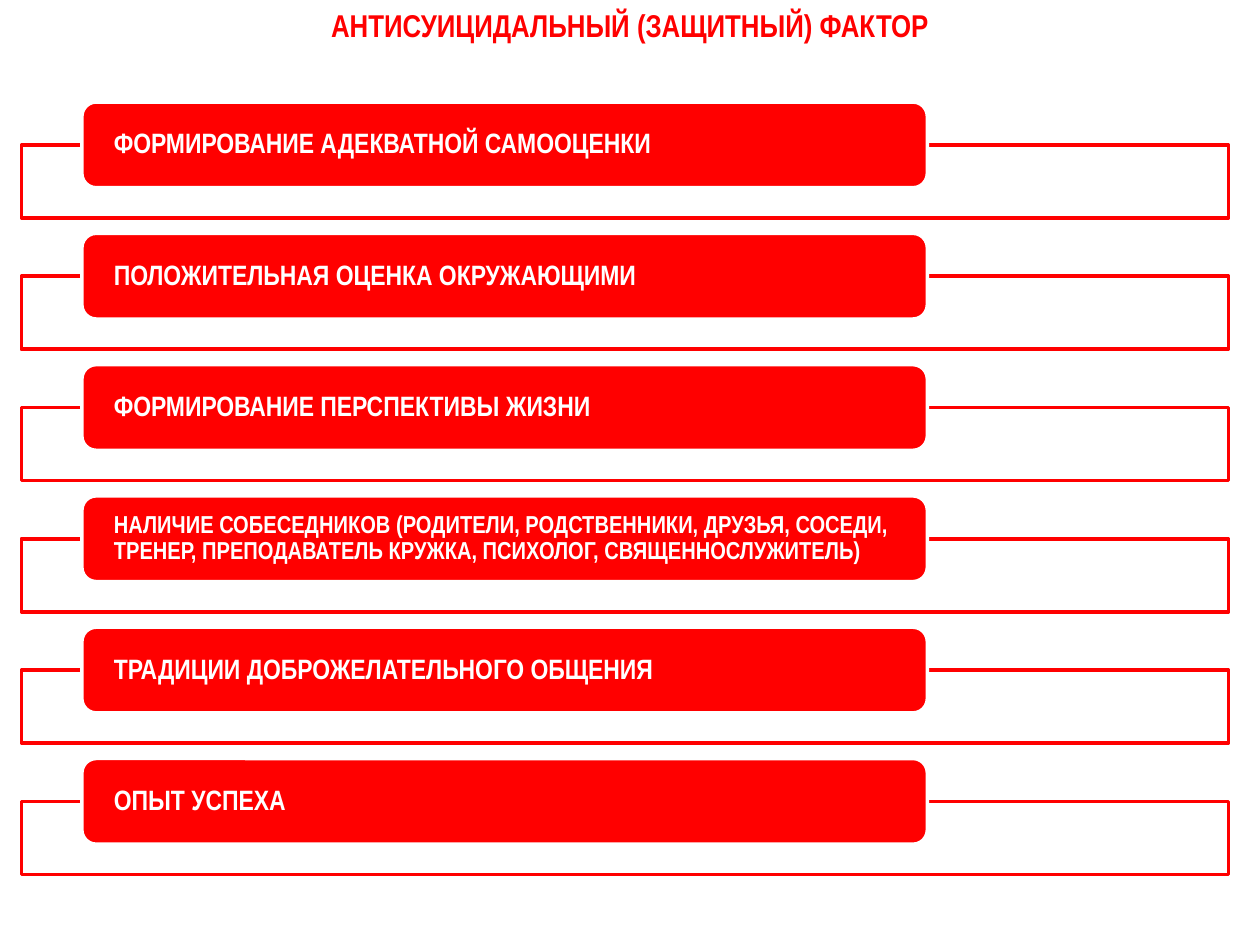
"""Build the slide that lists the factors protecting against suicide."""
from dataclasses import dataclass

import pptx
import pptx.dml.color
import pptx.enum.shapes
import pptx.enum.text
import pptx.oxml
import pptx.oxml.ns
import pptx.util
from pptx.util import Inches

RED = pptx.dml.color.RGBColor(0xFF, 0x00, 0x00)
WHITE = pptx.dml.color.RGBColor(0xFF, 0xFF, 0xFF)
FONT = "Arial Narrow"
FIRST_TOP, LAST_TOP = 0.81, 6.02
FRAME_DROP = 0.34


@dataclass(frozen=True)
class Factor:
    wording: str
    size: int = 16


FACTORS = (
    Factor("ФОРМИРОВАНИЕ АДЕКВАТНОЙ САМООЦЕНКИ"),
    Factor("ПОЛОЖИТЕЛЬНАЯ ОЦЕНКА ОКРУЖАЮЩИМИ"),
    Factor("ФОРМИРОВАНИЕ ПЕРСПЕКТИВЫ ЖИЗНИ"),
    Factor(
        "НАЛИЧИЕ СОБЕСЕДНИКОВ (РОДИТЕЛИ, РОДСТВЕННИКИ, ДРУЗЬЯ, СОСЕДИ, "
        "ТРЕНЕР, ПРЕПОДАВАТЕЛЬ КРУЖКА, ПСИХОЛОГ, СВЯЩЕННОСЛУЖИТЕЛЬ)",
        size=14,
    ),
    Factor("ТРАДИЦИИ ДОБРОЖЕЛАТЕЛЬНОГО ОБЩЕНИЯ"),
    Factor("ОПЫТ УСПЕХА"),
)


def write(holder, wording: str, *, size: int, color, align,
          anchor=pptx.enum.text.MSO_ANCHOR.TOP, spacing: float = 1.0,
          side: float = 0.1, edge: float = 0.05) -> None:
    frame = holder.text_frame
    frame.word_wrap = True
    frame.vertical_anchor = anchor
    frame.margin_left = frame.margin_right = Inches(side)
    frame.margin_top = frame.margin_bottom = Inches(edge)
    paragraph = frame.paragraphs[0]
    paragraph.alignment = align
    paragraph.line_spacing = spacing
    run = paragraph.add_run()
    run.text = wording
    run.font.name = FONT
    run.font.size = pptx.util.Pt(size)
    run.font.bold = True
    run.font.color.rgb = color


def add_panel(slide, kind, left: float, top: float, width: float,
              height: float, *, fill, line):
    panel = slide.shapes.add_shape(
        kind, Inches(left), Inches(top), Inches(width), Inches(height))
    panel.shadow.inherit = False
    panel.fill.solid()
    panel.fill.fore_color.rgb = fill
    panel.line.color.rgb = line
    panel.line.width = pptx.util.Pt(2)
    return panel


def set_opacity(panel, percent: int) -> None:
    color = panel.fill._xPr.find(".//" + pptx.oxml.ns.qn("a:srgbClr"))
    color.append(pptx.oxml.parse_xml(
        f'<a:alpha {pptx.oxml.ns.nsdecls("a")} val="{percent * 1000}"/>'))


def add_factor(slide, factor: Factor, top: float) -> None:
    kinds = pptx.enum.shapes.MSO_SHAPE
    frame = add_panel(slide, kinds.RECTANGLE, 0.17, top + FRAME_DROP,
                      9.58, 0.58, fill=WHITE, line=RED)
    set_opacity(frame, 90)
    label = add_panel(slide, kinds.ROUNDED_RECTANGLE, 0.65, top,
                      6.71, 0.68, fill=RED, line=WHITE)
    write(label, factor.wording, size=factor.size, color=WHITE,
          align=pptx.enum.text.PP_ALIGN.LEFT,
          anchor=pptx.enum.text.MSO_ANCHOR.MIDDLE,
          spacing=0.9, side=0.22, edge=0)


def main() -> None:
    deck = pptx.Presentation()
    deck.slide_width, deck.slide_height = Inches(10), Inches(7.5)
    slide = deck.slides.add_slide(deck.slide_layouts[6])
    heading = slide.shapes.add_textbox(0, 0, Inches(10), Inches(0.4))
    write(heading, "АНТИСУИЦИДАЛЬНЫЙ (ЗАЩИТНЫЙ) ФАКТОР", size=18,
          color=RED, align=pptx.enum.text.PP_ALIGN.CENTER)
    pitch = (LAST_TOP - FIRST_TOP) / (len(FACTORS) - 1)
    for row, factor in enumerate(FACTORS):
        add_factor(slide, factor, FIRST_TOP + row * pitch)
    deck.save("out.pptx")


if __name__ == "__main__":
    main()
